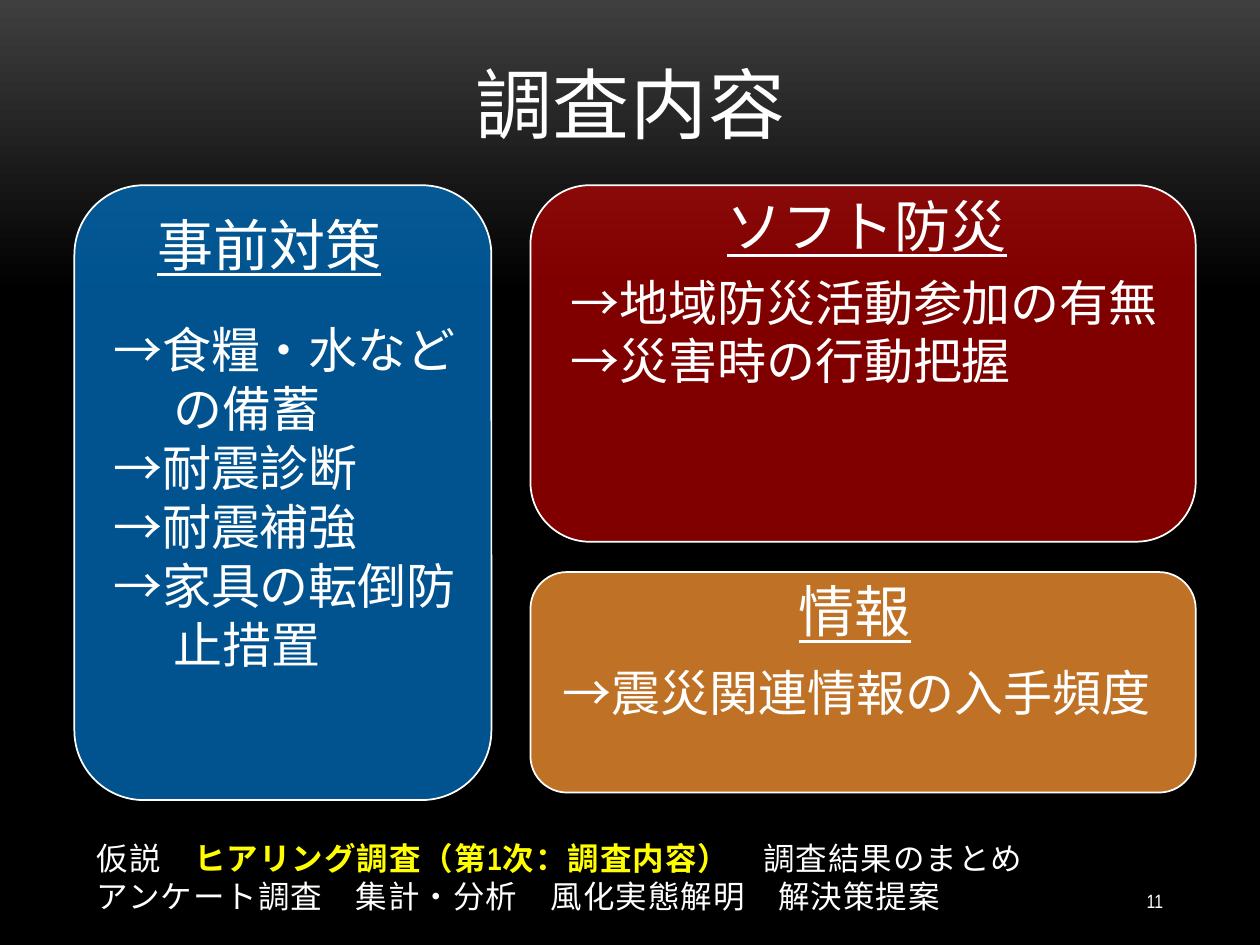
import pptx
import pptx.util
import pptx.dml.color
import pptx.enum.shapes
import pptx.enum.text
from dataclasses import dataclass
from lxml import etree
from pptx.oxml.ns import qn

Inches = pptx.util.Inches
Align = pptx.enum.text.PP_ALIGN
Anchor = pptx.enum.text.MSO_ANCHOR


@dataclass(frozen=True)
class Theme:
    cjk: str = "Noto Sans CJK JP"
    latin: str = "Arial Narrow"
    white: str = "FFFFFF"
    highlight: str = "FFFF00"
    backdrop: tuple = ((0, "3F3F3F"), (0.31, "000000"))
    title: int = 44
    heading: int = 32
    body: int = 28
    footer: int = 18
    number: int = 11


THEME = Theme()

# Content: a leading TAB_MARK means the line continues the item above
CONTINUES = "+"
TITLE = "調査内容"
PAGE = "11"
PANELS = [
    dict(box=(0.59, 1.47, 3.31, 4.88), color="0070C0", opacity=75,
         heading="事前対策", heading_box=(1.15, 1.62, 2.28, 0.64),
         items=["→食糧・水など", "+の備蓄", "→耐震診断", "→耐震補強",
                "→家具の転倒防", "+止措置"],
         items_box=(0.8, 2.49, 2.99, 3.4)),
    dict(box=(4.21, 1.47, 5.28, 2.83), color="FF0000", opacity=50,
         heading="ソフト防災", heading_box=(5.67, 1.47, 2.52, 0.64),
         items=["→地域防災活動参加の有無", "→災害時の行動把握"],
         items_box=(4.43, 2.11, 5, 1.04)),
    dict(box=(4.21, 4.54, 5.28, 1.75), color="FF9933", opacity=75,
         heading="情報", heading_box=(6.24, 4.53, 1.22, 0.64),
         items=["→震災関連情報の入手頻度"],
         items_box=(4.37, 5.21, 5.04, 0.57)),
]
CURRENT_STEP = "ヒアリング調査（第1次：調査内容）"
STEPS = [
    ["仮説　", CURRENT_STEP, "　調査結果のまとめ"],
    ["アンケート調査　集計・分析　風化実態解明　解決策提案"],
]


def rgb(color):
    return pptx.dml.color.RGBColor.from_string(color)


def add_text(slide, box, lines, size, latin=THEME.cjk, align=Align.LEFT,
             anchor=Anchor.TOP, underline=None, spacing=0):
    """Add a text box; each line is a list of runs."""
    frame = slide.shapes.add_textbox(*map(Inches, box)).text_frame
    frame.word_wrap = True
    frame.vertical_anchor = anchor
    for index, runs in enumerate(lines):
        line = frame.paragraphs[0] if index == 0 else frame.add_paragraph()
        line.alignment = align
        font = line.font
        font.name, font.size = latin, pptx.util.Pt(size)
        font.underline = underline
        font.color.rgb = rgb(THEME.white)
        defaults = line._p.pPr.find(qn("a:defRPr"))
        if spacing:
            defaults.set("spc", str(round(spacing * 100)))
        east_asian = etree.Element(qn("a:ea"), typeface=THEME.cjk)
        defaults.find(qn("a:latin")).addnext(east_asian)
        if runs[0].startswith(CONTINUES):
            line._p.pPr.set("marL", str(Inches(0.48)))
        for words in runs:
            run = line.add_run()
            run.text = words.removeprefix(CONTINUES)
            if words == CURRENT_STEP:
                run.font.bold = True
                run.font.color.rgb = rgb(THEME.highlight)


def add_panel(slide, panel):
    card = slide.shapes.add_shape(
        pptx.enum.shapes.MSO_SHAPE.ROUNDED_RECTANGLE, *map(Inches, panel["box"]))
    card.shadow.inherit = False
    card.fill.solid()
    card.fill.fore_color.rgb = rgb(panel["color"])
    fill_color = card._element.spPr.find(qn("a:solidFill"))[0]
    etree.SubElement(fill_color, qn("a:alpha"), val=str(panel["opacity"] * 1000))
    card.line.color.rgb = rgb(THEME.white)
    card.line.width = pptx.util.Pt(1)
    add_text(slide, panel["heading_box"], [[panel["heading"]]], THEME.heading,
             underline=True)
    add_text(slide, panel["items_box"], [[item] for item in panel["items"]],
             THEME.body)


def main():
    deck = pptx.Presentation()
    deck.slide_width, deck.slide_height = Inches(10), Inches(7.5)
    slide = deck.slides.add_slide(deck.slide_layouts[6])

    # Background: dark grey fading to black, top to bottom
    backdrop = slide.background.fill
    backdrop.gradient()
    backdrop.gradient_angle = 270
    for stop, (position, color) in zip(backdrop.gradient_stops, THEME.backdrop):
        stop.position = position
        stop.color.rgb = rgb(color)

    # Title and panels
    add_text(slide, (0.67, 0.52, 8.67, 0.71), [[TITLE]], THEME.title,
             align=Align.CENTER, anchor=Anchor.BOTTOM, spacing=0.5)
    for panel in PANELS:
        add_panel(slide, panel)

    # Survey steps and page number
    add_text(slide, (0.67, 6.51, 9.06, 0.9), STEPS, THEME.footer,
             latin=THEME.latin, anchor=Anchor.MIDDLE, spacing=0.6)
    add_text(slide, (8.25, 6.95, 1.08, 0.4), [[PAGE]], THEME.number,
             latin=THEME.latin, align=Align.RIGHT, anchor=Anchor.MIDDLE)

    deck.save("out.pptx")


if __name__ == "__main__":
    main()
